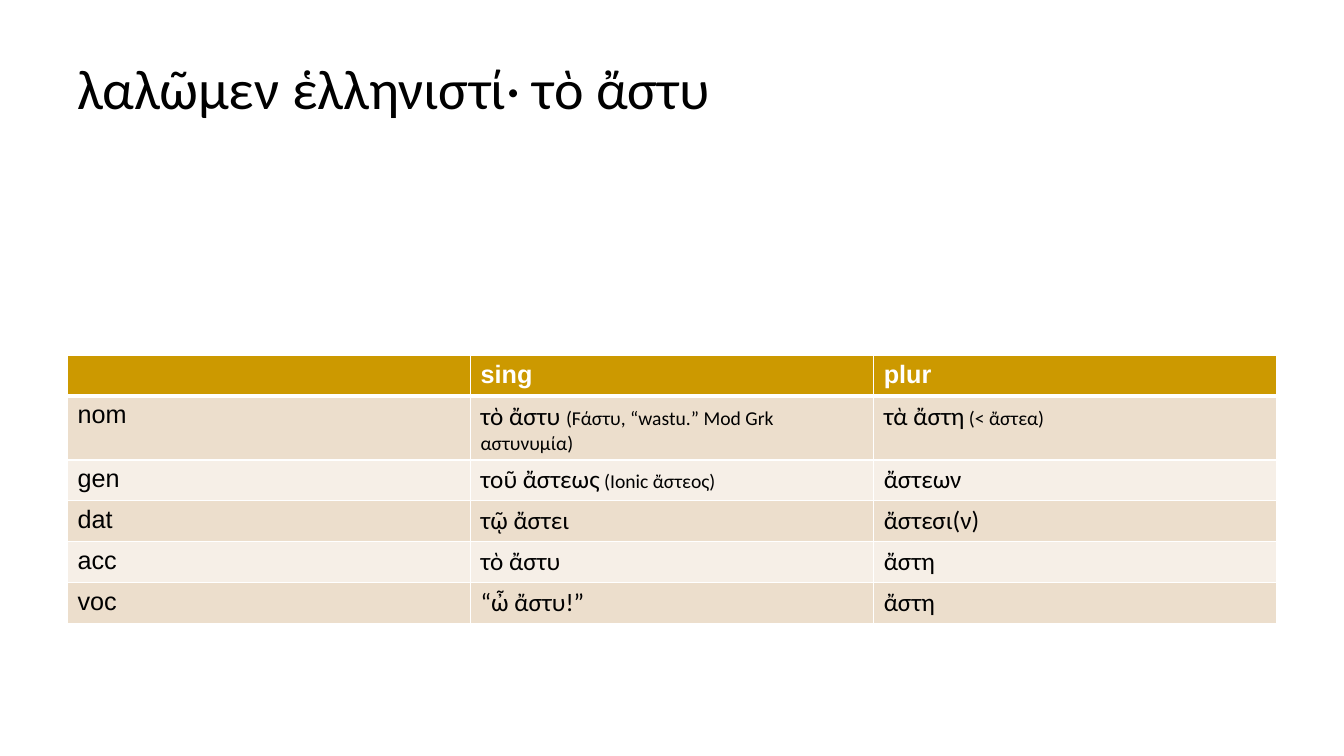
from dataclasses import dataclass

from lxml.etree import SubElement
from pptx import Presentation
from pptx.dml.color import RGBColor
from pptx.enum.text import MSO_ANCHOR
from pptx.oxml.ns import qn
from pptx.util import Cm, Pt


@dataclass(frozen=True)
class Theme:
    label_font: str = "Arial"
    greek_font: str = "Calibri"
    title_size: int = 40
    body_size: int = 18
    note_size: int = 14
    ink: str = "000000"
    white: str = "FFFFFF"
    header: str = "CC9900"
    bands: tuple = ("ECDECC", "F6EFE7")


THEME = Theme()

TITLE = "λαλῶμεν ἑλληνιστί· τὸ ἄστυ"
HEADINGS = ("", "sing", "plur")
# Case, then (form, note) for singular and plural
DECLENSION = [
    ("nom", ("τὸ ἄστυ ", "(Ϝάστυ, “wastu.” Mod Grk αστυνυμία)"), ("τὰ ἄστη", " (< ἄστεα)")),
    ("gen", ("τοῦ ἄστεως", " (Ionic ἄστεος)"), ("ἄστεων", "")),
    ("dat", ("τῷ ἄστει", ""), ("ἄστεσι(ν)", "")),
    ("acc", ("τὸ ἄστυ", ""), ("ἄστη", "")),
    ("voc", ("“ὦ ἄστυ!”", ""), ("ἄστη", "")),
]


def add_text(p, text, font=THEME.greek_font, size=THEME.body_size, color=THEME.ink, bold=False):
    r = p.add_run()
    r.text = text
    r.font.name = font
    r.font.size = Pt(size)
    r.font.bold = bold
    r.font.color.rgb = RGBColor.from_string(color)


def add_title(slide):
    tf = slide.shapes.add_textbox(Cm(1.7), Cm(0.2), Cm(30.48), Cm(2.97)).text_frame
    tf.word_wrap = True
    tf.vertical_anchor = MSO_ANCHOR.BOTTOM
    add_text(tf.paragraphs[0], TITLE, size=THEME.title_size)


def style_cell(cell, fill, top=1, bottom=1):
    """Draw white borders (widths in points) and fill the cell."""
    tc_pr = cell._tc.get_or_add_tcPr()
    for side, width in (("L", 1), ("R", 1), ("T", top), ("B", bottom)):
        ln = SubElement(tc_pr, qn(f"a:ln{side}"), w=str(Pt(width)))
        SubElement(SubElement(ln, qn("a:solidFill")), qn("a:srgbClr"), val=THEME.white)
    cell.fill.solid()
    cell.fill.fore_color.rgb = RGBColor.from_string(fill)


def add_header(table):
    for cell, heading in zip(table.rows[0].cells, HEADINGS):
        style_cell(cell, THEME.header, bottom=3)
        p = cell.text_frame.paragraphs[0]
        if heading:
            add_text(p, heading, font=THEME.label_font, color=THEME.white, bold=True)
        else:
            p.font.size = Pt(THEME.body_size)


def add_case_row(table, index, case, *forms):
    cells = list(table.rows[index].cells)
    for cell in cells:
        style_cell(cell, THEME.bands[(index - 1) % 2], top=3 if index == 1 else 1)
    add_text(cells[0].text_frame.paragraphs[0], case, font=THEME.label_font)
    for cell, (form, note) in zip(cells[1:], forms):
        p = cell.text_frame.paragraphs[0]
        add_text(p, form)
        if note:
            add_text(p, note, size=THEME.note_size)


def add_declension_table(slide):
    rows, row_height = len(DECLENSION) + 1, Cm(1.03)
    table = slide.shapes.add_table(
        rows, len(HEADINGS), Cm(1.7), Cm(8.95), Cm(30.48), row_height * rows
    ).table
    add_header(table)
    for index, entry in enumerate(DECLENSION, start=1):
        add_case_row(table, index, *entry)


def main():
    prs = Presentation()
    prs.slide_width, prs.slide_height = Cm(33.87), Cm(19.05)
    slide = prs.slides.add_slide(prs.slide_layouts[6])
    add_title(slide)
    add_declension_table(slide)
    prs.save("out.pptx")


if __name__ == "__main__":
    main()
